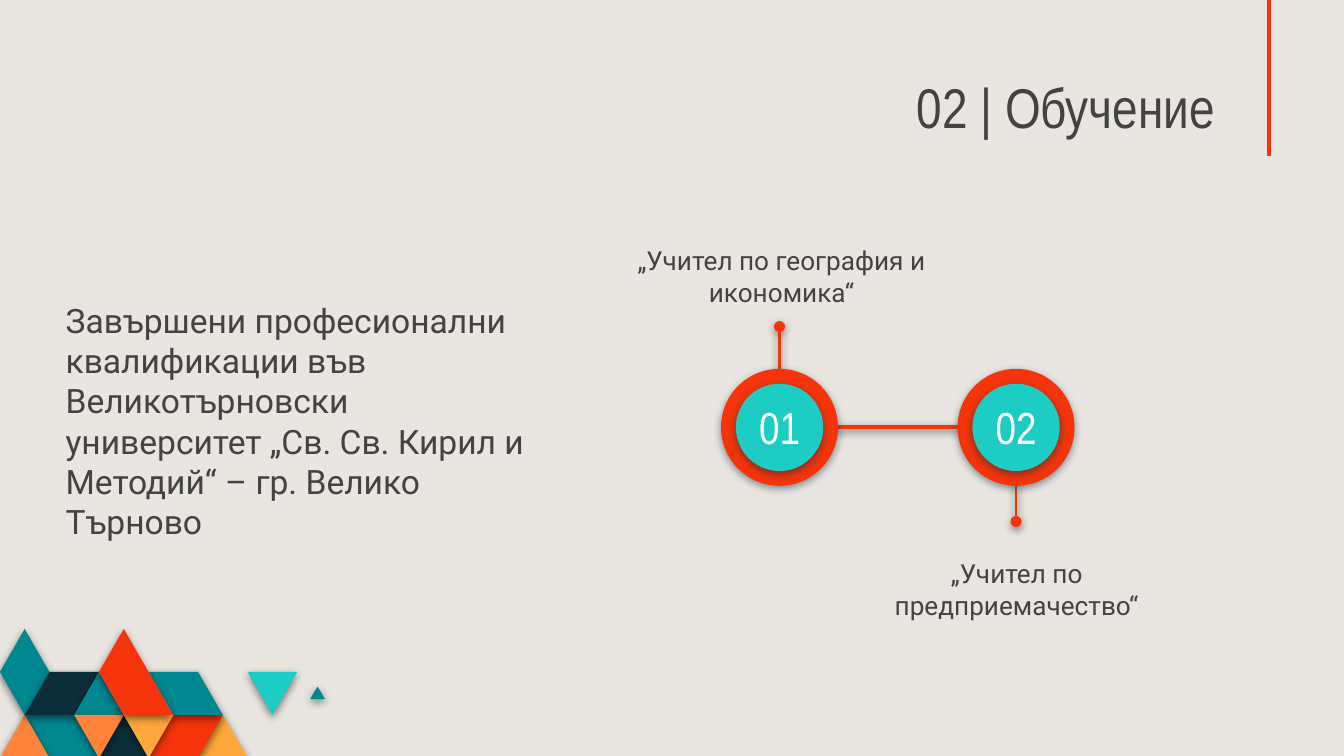
from pptx import Presentation
from pptx.dml.color import RGBColor
from pptx.enum.shapes import MSO_CONNECTOR as Conn, MSO_SHAPE as Shape
from pptx.enum.text import MSO_ANCHOR as Anchor, MSO_AUTO_SIZE as Auto, PP_ALIGN as Align
from pptx.oxml.ns import qn
from pptx.oxml.xmlchemy import OxmlElement
from pptx.util import Inches, Pt

SAND = RGBColor(0xE9, 0xE6, 0xE1)
RED = RGBColor(0xF5, 0x34, 0x0B)
TEAL = RGBColor(0x01, 0x87, 0x90)
AQUA = RGBColor(0x1D, 0xCD, 0xC3)
NAVY = RGBColor(0x0C, 0x2E, 0x3A)
CORAL = RGBColor(0xFF, 0x82, 0x3B)
AMBER = RGBColor(0xFF, 0xA7, 0x3B)
GREY = RGBColor(0x43, 0x43, 0x43)
WHITE = RGBColor(0xFF, 0xFF, 0xFF)
BLACK = RGBColor(0, 0, 0)


def shade(item, color=BLACK):
    """Give a shape or connector a soft shadow below it; None for no shadow."""
    props = item._element.spPr
    effects = OxmlElement("a:effectLst")
    props.append(effects)
    if color is not None:
        outer = OxmlElement("a:outerShdw")
        for key, val in (("blurRad", Pt(4.5)), ("dist", Pt(1.5)),
                         ("dir", 5400000), ("algn", "bl"), ("rotWithShape", 0)):
            outer.set(key, str(val))
        tint = OxmlElement("a:srgbClr")
        tint.set("val", str(color))
        alpha = OxmlElement("a:alpha")
        alpha.set("val", "50000")
        tint.append(alpha)
        outer.append(tint)
        effects.append(outer)


def write(box, text, size, font, color, align, anchor=Anchor.TOP):
    frame = box.text_frame
    frame.word_wrap = True
    frame.auto_size = Auto.NONE
    frame.vertical_anchor = anchor
    frame.margin_left = frame.margin_right = Inches(0.1)
    frame.margin_top = frame.margin_bottom = Inches(0.1)
    para = frame.paragraphs[0]
    para.text = text
    para.alignment = align
    para.font.size = Pt(size)
    para.font.name = font
    para.font.color.rgb = color
    return para


deck = Presentation()
deck.slide_width = Inches(10)
deck.slide_height = deck.slide_width * 9 // 16
slide = deck.slides.add_slide(deck.slide_layouts[5])
slide.background.fill.solid()
slide.background.fill.fore_color.rgb = SAND
shapes = slide.shapes

# Title
title = shapes.title
title.left, title.top = Inches(5), Inches(0.51)
title.width, title.height = Inches(4.14), Inches(0.63)
head = write(title, "02 | Обучение", 30, "Arial Narrow", GREY, Align.RIGHT, Anchor.BOTTOM)
head.line_spacing = 0.8

# Corner mosaic: points are (column, row) on a triangle grid
STEP, ROW, TOP = 0.1843, 0.32, 4.68
tiles = [
    (AMBER, [(10, 3), (9, 2), (8, 3)]),
    (RED, [(9, 2), (7, 2), (6, 3), (8, 3)]),
    (TEAL, [(4, 3), (3, 2), (1, 2), (2, 3)]),
    (CORAL, [(2, 3), (1, 2), (0, 3)]),
    (NAVY, [(6, 3), (5, 2), (4, 3)]),
    (TEAL, [(9, 2), (8, 1), (6, 1), (7, 2)]),
    (TEAL, [(13.12, 1.63), (12.82, 1.34), (12.52, 1.63)]),
    (AQUA, [(12, 1), (10, 1), (11, 2)]),
    (TEAL, [(2, 1), (1, 0), (0, 1), (1, 2)]),
    (NAVY, [(4, 1), (2, 1), (1, 2), (3, 2)]),
    (TEAL, [(5, 2), (4, 1), (3, 2)]),
    (CORAL, [(5, 2), (3, 2), (4, 3)]),
    (AMBER, [(7, 2), (5, 2), (6, 3)]),
    (RED, [(7, 2), (5, 0), (4, 1), (5, 2)]),
]
for color, grid in tiles:
    points = [(Inches(c * STEP), Inches(TOP + r * ROW)) for c, r in grid]
    pen = shapes.build_freeform(*points[0])
    pen.add_line_segments(points[1:], close=True)
    tile = pen.convert_to_shape()
    tile.fill.solid()
    tile.fill.fore_color.rgb = color
    tile.line.fill.background()
    shade(tile)

# Lines: accent bar, link between the steps, then the two pins
MID = 3.18
lines = [
    (9.44, 0, 9.44, 1.16, 2.25, False, None),
    (6.2, MID, 7.17, MID, 2.25, False, BLACK),
    (5.8, 2.86, 5.8, 2.43, 1.5, True, BLACK),
    (7.56, 3.5, 7.56, 3.88, 1.5, True, BLACK),
]
for x1, y1, x2, y2, weight, pin, dark in lines:
    line = shapes.add_connector(Conn.STRAIGHT, Inches(x1), Inches(y1), Inches(x2), Inches(y2))
    line.line.color.rgb = RED
    line.line.width = Pt(weight)
    if pin:
        tail = OxmlElement("a:tailEnd")
        tail.set("type", "oval")
        line._element.spPr.find(qn("a:ln")).append(tail)
    shade(line, dark)

# Steps
steps = [
    ("01", 5.8, "„Учител по география и икономика“", 4.41, 1.72, 2.81),
    ("02", 7.56, "„Учител по предприемачество“", 6.26, 4.05, 2.61),
]
for number, x, label, left, top, width in steps:
    for size, color in ((0.87, RED), (0.65, AQUA)):
        disc = shapes.add_shape(Shape.OVAL, Inches(x - size / 2), Inches(MID - size / 2),
                                Inches(size), Inches(size))
        disc.fill.solid()
        disc.fill.fore_color.rgb = color
        disc.line.fill.background()
        shade(disc, NAVY)
    box = shapes.add_textbox(Inches(x - 0.39), Inches(2.93), Inches(0.78), Inches(0.49))
    write(box, number, 24, "Arial Narrow", WHITE, Align.CENTER, Anchor.MIDDLE)
    box = shapes.add_textbox(Inches(left), Inches(top), Inches(width), Inches(0.58))
    write(box, label, 14, "Roboto", GREY, Align.CENTER)

# Introduction
intro = shapes.add_textbox(Inches(0.39), Inches(2.13), Inches(3.76), Inches(1.76))
write(intro, "Завършени професионални квалификации във Великотърновски университет "
      "„Св. Св. Кирил и Методий“ – гр. Велико Търново", 18, "Roboto", GREY, Align.LEFT)

deck.save("out.pptx")
